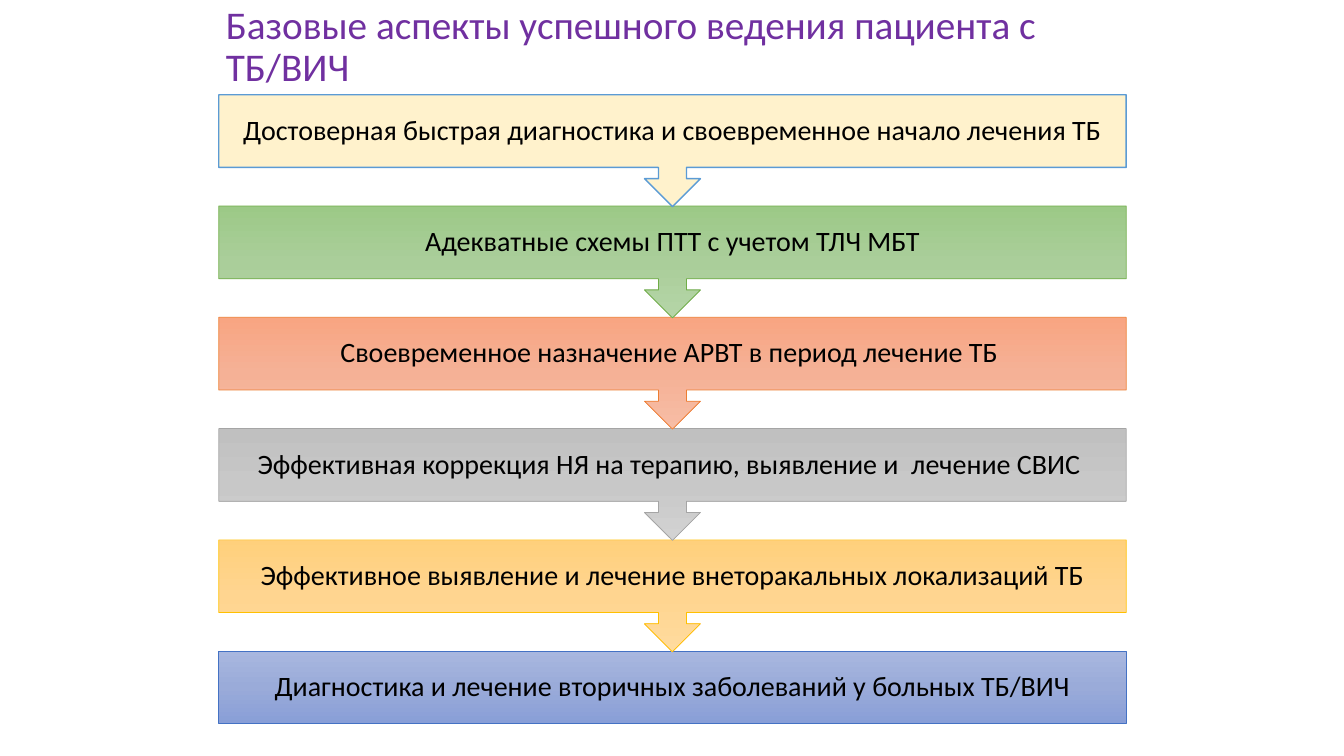
import copy
import dataclasses

import pptx
import pptx.dml.color
import pptx.enum.shapes
import pptx.enum.text
import pptx.util

PX = 9144


@dataclasses.dataclass(frozen=True)
class Theme:
    """Colours, font and type sizes of the slide."""

    font: str = "Calibri"
    title_size: int = 28
    step_size: int = 20
    title: str = "7030A0"
    text: str = "000000"
    line_spacing: float = 0.9


@dataclasses.dataclass(frozen=True)
class Box:
    """A rectangle in px."""

    left: int
    top: int
    width: int
    height: int

    def emu(self):
        """Return the four lengths in EMU."""
        return [round(length * PX) for length in dataclasses.astuple(self)]


@dataclasses.dataclass(frozen=True)
class Step:
    """One step: wording, fill colours from top to bottom, and outline."""

    text: str
    fills: tuple
    line: str
    line_width: float = 0.5


THEME = Theme()
TITLE = "Базовые аспекты успешного ведения пациента с ТБ/ВИЧ"
STEPS = [
    Step("Достоверная быстрая диагностика и своевременное начало лечения ТБ",
         ("FFF2CC",), "5B9BD5", 1),
    Step("Адекватные схемы ПТТ с учетом ТЛЧ МБТ",
         ("9CC987", "AACE9A", "B5D5A7"), "70AD47"),
    Step("Своевременное назначение АРВТ в период лечение ТБ ",
         ("F8A582", "F5B196", "F7BDA5"), "ED7D31"),
    Step("Эффективная коррекция НЯ на терапию, выявление и  лечение СВИС ",
         ("C0C0C0", "C8C8C8", "D2D2D2"), "A5A5A5"),
    Step("Эффективное выявление и лечение внеторакальных локализаций ТБ",
         ("FFD07C", "FFD590", "FFDB9E"), "FFC000"),
    Step("Диагностика и лечение вторичных заболеваний у больных ТБ/ВИЧ",
         ("A8B7DF", "9AABD9", "889ED7"), "4472C4"),
]


def rgb(code):
    """Turn a hex code into a colour."""
    return pptx.dml.color.RGBColor.from_string(code)


def write(shape, text, size, color, align):
    """Set one formatted paragraph, centred vertically."""
    frame = shape.text_frame
    frame.text = text
    frame.word_wrap = True
    frame.auto_size = pptx.enum.text.MSO_AUTO_SIZE.NONE
    frame.vertical_anchor = pptx.enum.text.MSO_ANCHOR.MIDDLE
    para = frame.paragraphs[0]
    para.alignment = align
    para.line_spacing = THEME.line_spacing
    para.font.name = THEME.font
    para.font.size = pptx.util.Pt(size)
    para.font.color.rgb = rgb(color)


def paint(fill, colors):
    """Fill with one colour or with a three-stop gradient running down."""
    if len(colors) == 1:
        fill.solid()
        fill.fore_color.rgb = rgb(colors[0])
        return
    fill.gradient()
    fill.gradient_angle = 270
    first = fill.gradient_stops[0]._gs
    first.addnext(copy.deepcopy(first))
    for stop, position, color in zip(fill.gradient_stops, (0, 0.5, 1), colors):
        stop.position = position
        stop.color.rgb = rgb(color)


def add_title(page, box):
    """Place the slide title."""
    title = page.shapes.title
    title.left, title.top, title.width, title.height = box.emu()
    write(title, TITLE, THEME.title_size, THEME.title,
          pptx.enum.text.PP_ALIGN.LEFT)


def add_step(page, step, kind, box):
    """Draw one step with its wording inside."""
    shape = page.shapes.add_shape(kind, *box.emu())
    shape.shadow.inherit = False
    paint(shape.fill, step.fills)
    shape.line.color.rgb = rgb(step.line)
    shape.line.width = pptx.util.Pt(step.line_width)
    write(shape, step.text, THEME.step_size, THEME.text,
          pptx.enum.text.PP_ALIGN.CENTER)
    frame = shape.text_frame
    frame.margin_left = frame.margin_right = 16 * PX
    frame.margin_top = frame.margin_bottom = 16 * PX


def add_process(page, box, bar_height=72, callout_height=111):
    """Stack the steps evenly, from the last up to the first."""
    kinds = pptx.enum.shapes.MSO_SHAPE
    last = len(STEPS) - 1
    pitch = (box.height - bar_height) / last
    for index in range(last, -1, -1):
        kind, height = kinds.DOWN_ARROW_CALLOUT, callout_height
        if index == last:
            kind, height = kinds.RECTANGLE, bar_height
        add_step(page, STEPS[index], kind,
                 Box(box.left, box.top + index * pitch, box.width, height))


def main():
    """Build and save the deck."""
    deck = pptx.Presentation()
    deck.slide_width, deck.slide_height = 1333 * PX, 750 * PX
    page = deck.slides.add_slide(deck.slide_layouts[5])
    add_title(page, Box(214, 0, 900, 95))
    add_process(page, Box(217, 94, 900, 624))
    deck.save("out.pptx")


if __name__ == "__main__":
    main()
